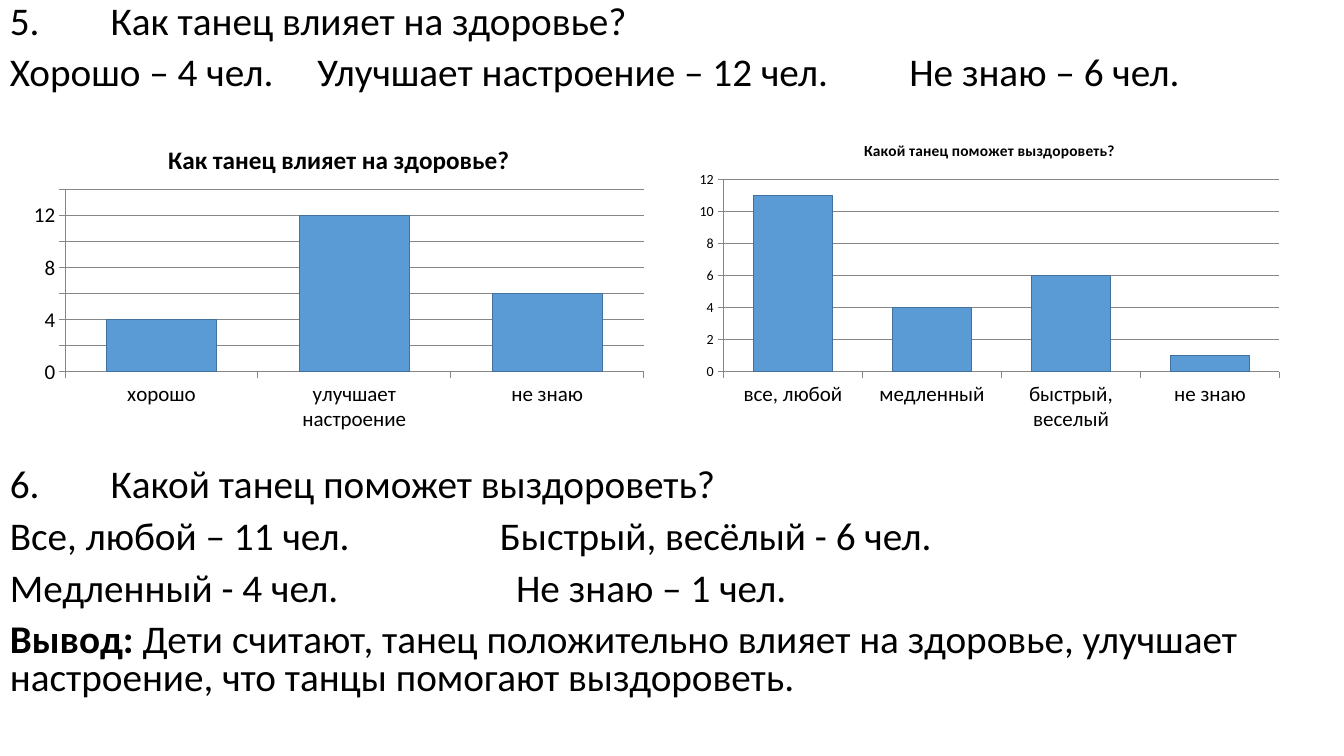
from dataclasses import dataclass

from lxml.etree import SubElement
from pptx import Presentation
from pptx.chart.data import CategoryChartData
from pptx.dml.color import RGBColor
from pptx.enum.chart import XL_CHART_TYPE as ChartType, XL_TICK_MARK as Tick
from pptx.oxml.ns import qn
from pptx.util import Inches, Pt


@dataclass(frozen=True)
class Theme:
    font: str = "Calibri"
    ink: RGBColor = RGBColor(0x00, 0x00, 0x00)
    bar: RGBColor = RGBColor(0x5B, 0x9B, 0xD5)
    bar_edge: RGBColor = RGBColor(0x41, 0x71, 0x9C)
    grid: RGBColor = RGBColor(0x86, 0x86, 0x86)
    body_size: int = 28
    label_size: int = 15


class SurveyPage:
    def __init__(self, deck, theme):
        self.theme = theme
        self.page = deck.slides.add_slide(deck.slide_layouts[6])

    def style_font(self, font, size, bold=False):
        font.name = self.theme.font
        font.size = Pt(size)
        font.bold = bold
        font.color.rgb = self.theme.ink

    def add_text(self, top, height, lines):
        """Each line is (tab stops in inches, [(text, bold), ...])."""
        box = self.page.shapes.add_textbox(
            Inches(0), Inches(top), Inches(13.33), Inches(height))
        frame = box.text_frame
        frame.word_wrap = True
        for number, (stops, spans) in enumerate(lines):
            para = frame.add_paragraph() if number else frame.paragraphs[0]
            para.line_spacing = 0.8
            para.space_before = Pt(10 if number else 0)
            if stops:
                tabs = SubElement(para._p.get_or_add_pPr(), qn("a:tabLst"))
                for stop in stops:
                    SubElement(tabs, qn("a:tab"), pos=str(Inches(stop)), algn="l")
            for text, bold in spans:
                span = para.add_run()
                span.text = text
                self.style_font(span.font, self.theme.body_size, bold)

    def add_bars(self, left, width, title, answers, top_value, title_size, value_size):
        theme = self.theme
        data = CategoryChartData()
        data.categories = list(answers)
        data.add_series("Ответы", list(answers.values()))
        chart = self.page.shapes.add_chart(
            ChartType.COLUMN_CLUSTERED, Inches(left), Inches(1.25),
            Inches(width), Inches(3.1), data).chart
        self.style_font(chart.font, theme.label_size)
        chart.has_legend = False

        # Heading
        chart.has_title = True
        span = chart.chart_title.text_frame.paragraphs[0].add_run()
        span.text = title
        self.style_font(span.font, title_size, True)

        # Columns
        plot = chart.plots[0]
        plot.gap_width = 75
        plot.vary_by_categories = False
        columns = plot.series[0].format
        columns.fill.solid()
        columns.fill.fore_color.rgb = theme.bar
        columns.line.color.rgb = theme.bar_edge
        columns.line.width = Pt(0.75)

        # Axes
        values = chart.value_axis
        values.minimum_scale = 0
        values.maximum_scale = top_value
        values.major_unit = 2
        values.has_major_gridlines = True
        for axis, size in ((chart.category_axis, theme.label_size), (values, value_size)):
            axis.major_tick_mark = Tick.OUTSIDE
            axis.minor_tick_mark = Tick.NONE
            self.style_font(axis.tick_labels.font, size)
        for rule in (chart.category_axis, values, values.major_gridlines):
            rule.format.line.color.rgb = theme.grid
            rule.format.line.width = Pt(0.75)


def main():
    deck = Presentation()
    deck.slide_width = Inches(13.33)
    deck.slide_height = Inches(7.5)
    survey = SurveyPage(deck, Theme())

    # Question 5
    survey.add_text(0, 1.1, [
        ([1], [("5.\tКак танец влияет на здоровье?", False)]),
        ([3.05, 8.92], [("Хорошо – 4 чел.\tУлучшает настроение – 12 чел.\tНе знаю – 6 чел.", False)]),
    ])

    # Answer charts
    survey.add_bars(0.21, 6.3, "Как танец влияет на здоровье?",
                    {"хорошо": 4, "улучшает настроение": 12, "не знаю": 6},
                    top_value=14, title_size=18, value_size=15)
    survey.add_bars(6.82, 5.99, "Какой танец поможет выздороветь?",
                    {"все, любой": 11, "медленный": 4, "быстрый, веселый": 6, "не знаю": 1},
                    top_value=12, title_size=11, value_size=10)

    # Question 6 and conclusion
    survey.add_text(4.6, 2.9, [
        ([1], [("6.\tКакой танец поможет выздороветь?", False)]),
        ([4.86], [("Все, любой – 11 чел.\tБыстрый, весёлый - 6 чел.", False)]),
        ([5.02], [("Медленный - 4 чел.\tНе знаю – 1 чел.", False)]),
        ([], [("Вывод: ", True),
              ("Дети считают, танец положительно влияет на здоровье, улучшает "
               "настроение, что танцы помогают выздороветь.", False)]),
    ])

    deck.save("out.pptx")


if __name__ == "__main__":
    main()
